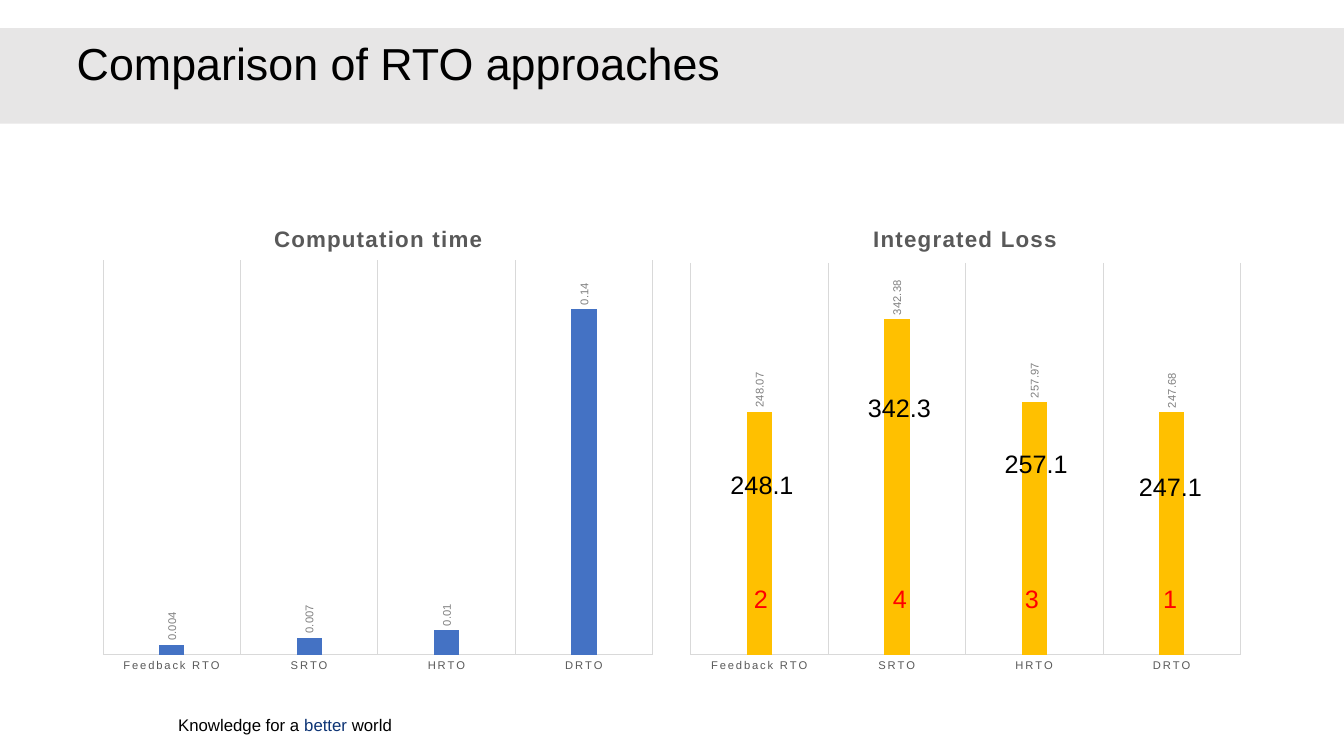
from lxml import etree
from pptx import Presentation
from pptx.chart.data import CategoryChartData
from pptx.dml.color import RGBColor
from pptx.enum.chart import XL_CHART_TYPE, XL_LABEL_POSITION, XL_TICK_MARK
from pptx.enum.shapes import MSO_SHAPE
from pptx.enum.text import MSO_ANCHOR, MSO_AUTO_SIZE, PP_ALIGN
from pptx.oxml.ns import qn
from pptx.util import Cm, Pt

COLUMN = XL_CHART_TYPE.COLUMN_CLUSTERED
OUTSIDE_END = XL_LABEL_POSITION.OUTSIDE_END
NO_TICK = XL_TICK_MARK.NONE
RECTANGLE = MSO_SHAPE.RECTANGLE
MIDDLE = MSO_ANCHOR.MIDDLE
LEFT = PP_ALIGN.LEFT
FIXED_SIZE = MSO_AUTO_SIZE.NONE
FONT = "Arial"


def style(font, size, color, bold=False):
    font.name = FONT
    font.size = Pt(size)
    font.bold = bold
    font.color.rgb = RGBColor.from_string(color)


def set_layout(element, index, **values):
    """Place a chart part by fractions of the chart area."""
    for old in element.findall(qn("c:layout")):
        element.remove(old)
    layout = etree.Element(qn("c:layout"))
    manual = etree.SubElement(layout, qn("c:manualLayout"))
    for name, value in values.items():
        etree.SubElement(manual, qn(f"c:{name}")).set("val", str(value))
    element.insert(index, layout)


presentation = Presentation()
presentation.slide_width = Cm(33.87)
presentation.slide_height = Cm(19.05)
slide = presentation.slides.add_slide(presentation.slide_layouts[5])
shapes = slide.shapes

# Title on a grey band, with the motto at the foot
title = shapes.title
title.left, title.top, title.width, title.height = Cm(1.68), Cm(0.71), Cm(30.48), Cm(3.18)
title_frame = title.text_frame
title_frame.text = "Comparison of RTO approaches"
title_frame.auto_size = FIXED_SIZE
title_frame.vertical_anchor = MIDDLE
title_frame.margin_bottom = Cm(1.4)
paragraph = title_frame.paragraphs[0]
paragraph.alignment = LEFT
paragraph.line_spacing = 0.9
style(paragraph.font, 32, "000000")

motto = shapes.add_textbox(Cm(4.24), Cm(17.88), Cm(6.25), Cm(0.76))
motto.text_frame.word_wrap = True
paragraph = motto.text_frame.paragraphs[0]
for text, color in (("Knowledge for a ", "000000"), ("better ", "0D3475"), ("world", "000000")):
    run = paragraph.add_run()
    run.text = text
    style(run.font, 12, color)

band = shapes.add_shape(RECTANGLE, 0, Cm(0.71), presentation.slide_width, Cm(2.41))
band.shadow.inherit = False
band.fill.solid()
band.fill.fore_color.rgb = RGBColor.from_string("E7E6E6")
band.line.fill.background()
for backdrop in (motto, band):
    title.element.addprevious(backdrop.element)

# Charts: heading, left, values, axis maximum, colour, number format,
# heading x, plot top, plot height
approaches = ("Feedback RTO", "SRTO", "HRTO", "DRTO")
charts = (
    ("Computation time", 2.34, (0.004, 0.007, 0.01, 0.14), 0.16, "4472C4", "General",
     0.31, 0.122, 0.823),
    ("Integrated Loss", 17.15, (248.07, 342.38, 257.97, 247.68), 400, "FFC000", "0.00",
     0.33, 0.128, 0.817),
)
for heading, left, values, maximum, color, number_format, heading_x, plot_y, plot_h in charts:
    data = CategoryChartData(number_format=number_format)
    data.categories = approaches
    data.add_series("Series 1", values)
    chart = shapes.add_chart(COLUMN, Cm(left), Cm(5.08), Cm(14.4), Cm(12.09), data).chart
    style(chart.font, 10, "000000")
    chart.has_legend = False
    chart.has_title = True
    chart.chart_title.text_frame.text = heading
    style(chart.chart_title.text_frame.paragraphs[0].font, 16, "595959", bold=True)

    plot = chart.plots[0]
    plot.vary_by_categories = False
    plot.gap_width = 444
    plot.overlap = -90
    fill = plot.series[0].format.fill
    fill.solid()
    fill.fore_color.rgb = RGBColor.from_string(color)
    plot.has_data_labels = True
    labels = plot.data_labels
    labels.show_value = True
    labels.position = OUTSIDE_END
    style(labels.font, 8, "808080")

    value_axis = chart.value_axis
    value_axis.visible = False
    value_axis.has_major_gridlines = False
    value_axis.minimum_scale = 0
    value_axis.maximum_scale = maximum
    category_axis = chart.category_axis
    category_axis.major_tick_mark = NO_TICK
    category_axis.has_major_gridlines = True
    style(category_axis.tick_labels.font, 8, "595959")
    for line in (category_axis.format.line, category_axis.major_gridlines.format.line):
        line.color.rgb = RGBColor.from_string("D9D9D9")
        line.width = Pt(0.75)

    # Upright value labels, letter spacing and fixed places
    root = chart.element
    root.xpath(".//c:dLbls/c:txPr/a:bodyPr")[0].set("rot", "-5400000")
    root.xpath(".//c:catAx/c:txPr//a:defRPr")[0].set("spc", "120")
    root.xpath(".//c:title//a:defRPr")[0].set("spc", "100")
    set_layout(root.xpath("c:chart/c:title")[0], 1,
               xMode="edge", yMode="edge", x=heading_x, y=0.04)
    set_layout(root.xpath(".//c:plotArea")[0], 0, layoutTarget="inner",
               xMode="edge", yMode="edge", x=0.018, y=plot_y, w=0.962, h=plot_h)

# Rank and rounded loss on each column of the second chart
notes = (
    ("2", 18.75, 14.58), ("4", 22.25, 14.58), ("3", 25.58, 14.58), ("1", 29.06, 14.58),
    ("248.1", 18.16, 11.71), ("342.3", 21.62, 9.75),
    ("257.1", 25.07, 11.18), ("247.1", 28.45, 11.76),
)
for text, left, top in notes:
    is_rank = len(text) == 1
    box = shapes.add_textbox(Cm(left), Cm(top), Cm(0.86 if is_rank else 2.11), Cm(1.02))
    box.text_frame.text = text
    style(box.text_frame.paragraphs[0].font, 18, "FF0000" if is_rank else "000000")

presentation.save("out.pptx")
